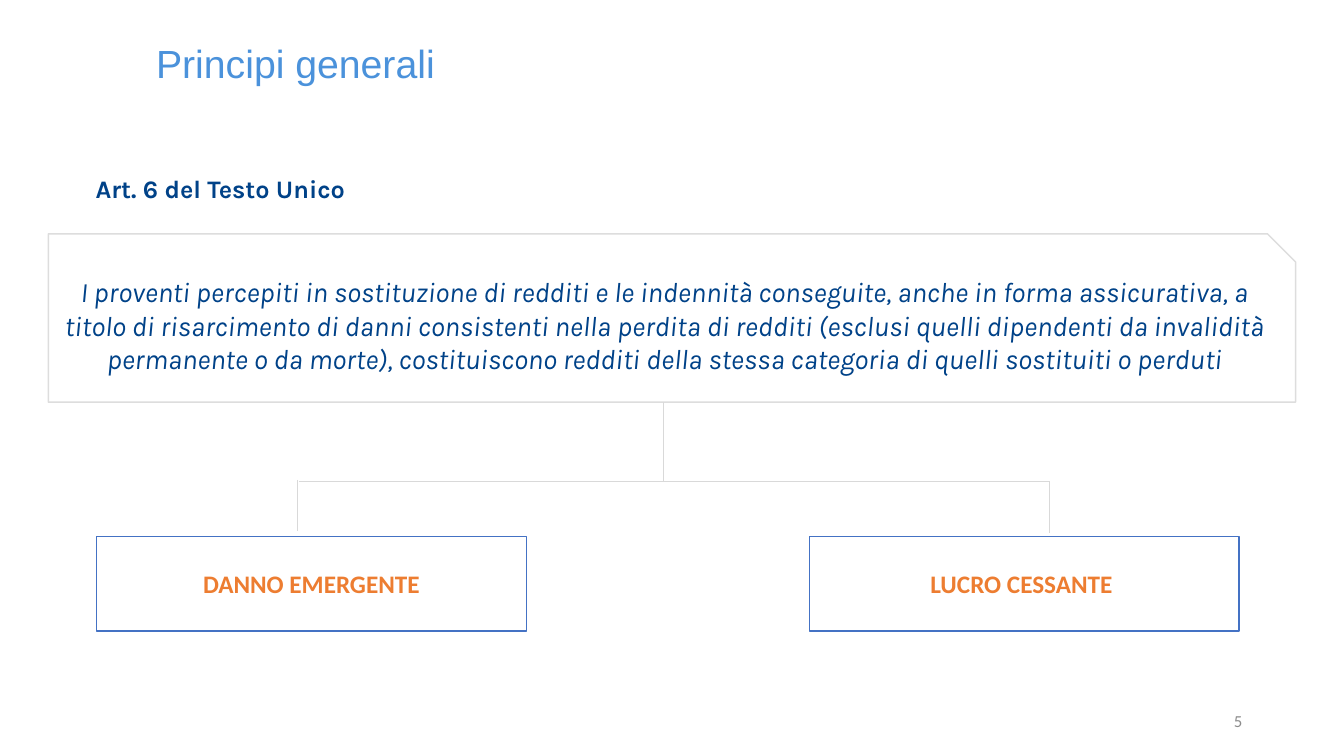
from dataclasses import dataclass

from lxml.etree import SubElement
from pptx import Presentation
from pptx.dml.color import RGBColor
from pptx.enum.shapes import MSO_CONNECTOR, MSO_SHAPE
from pptx.enum.text import MSO_ANCHOR, MSO_AUTO_SIZE, PP_ALIGN
from pptx.oxml.ns import qn
from pptx.slide import Slide
from pptx.text.text import TextFrame
from pptx.util import Inches, Pt


@dataclass(frozen=True)
class TextStyle:
    font: str
    size: float
    color: str
    bold: bool = False
    italic: bool = False


@dataclass(frozen=True)
class Theme:
    paper: str = "FFFFFF"
    article_line: str = "DDDDDD"
    damage_line: str = "4472C4"
    branch_line: str = "D9D9D9"
    border_width: float = 1
    branch_width: float = 0.5
    title: TextStyle = TextStyle("Arial", 28, "4B92DB")
    heading: TextStyle = TextStyle("Karla", 18, "004288", bold=True)
    article: TextStyle = TextStyle("Karla", 20, "004288", italic=True)
    damage: TextStyle = TextStyle("Calibri", 18, "ED7D31", bold=True)
    page_number: TextStyle = TextStyle("Calibri", 12, "8C8C8C")


@dataclass(frozen=True)
class Area:
    left: float
    top: float
    width: float
    height: float

    def lengths(self) -> tuple[Inches, Inches, Inches, Inches]:
        return Inches(self.left), Inches(self.top), Inches(self.width), Inches(self.height)


@dataclass(frozen=True)
class Panel:
    text: str
    area: Area
    outline: MSO_SHAPE
    line: str
    style: TextStyle


@dataclass(frozen=True)
class Label:
    text: str
    area: Area
    style: TextStyle
    align: PP_ALIGN = PP_ALIGN.LEFT
    anchor: MSO_ANCHOR = MSO_ANCHOR.TOP
    wrap: bool = True
    fit: MSO_AUTO_SIZE = MSO_AUTO_SIZE.SHAPE_TO_FIT_TEXT


@dataclass(frozen=True)
class Branch:
    x1: float
    y1: float
    x2: float
    y2: float


THEME = Theme()

PANELS = [
    Panel(
        "I proventi percepiti in sostituzione di redditi e le indennità conseguite, "
        "anche in forma assicurativa, a titolo di risarcimento di danni consistenti "
        "nella perdita di redditi (esclusi quelli dipendenti da invalidità permanente "
        "o da morte), costituiscono redditi della stessa categoria di quelli "
        "sostituiti o perduti",
        Area(0.48, 2.32, 12.37, 1.67),
        MSO_SHAPE.SNIP_1_RECTANGLE,
        THEME.article_line,
        THEME.article,
    ),
    *(
        Panel(text, Area(left, 5.32, 4.26, 0.94), MSO_SHAPE.RECTANGLE, THEME.damage_line, THEME.damage)
        for text, left in (("DANNO EMERGENTE", 0.96), ("LUCRO CESSANTE ", 8.03))
    ),
]

LABELS = [
    Label("Principi generali", Area(1.45, 0.34, 3, 0.57), THEME.title, wrap=False),
    Label("Art. 6 del Testo Unico", Area(0.85, 1.67, 6.67, 0.4), THEME.heading),
    Label("5", Area(9.42, 6.95, 3, 0.4), THEME.page_number,
          PP_ALIGN.RIGHT, MSO_ANCHOR.MIDDLE, fit=MSO_AUTO_SIZE.NONE),
]

BRANCHES = [
    Branch(6.58, 3.99, 6.58, 4.77),
    Branch(2.97, 4.78, 10.41, 4.78),
    Branch(2.95, 4.76, 2.95, 5.27),
    Branch(10.41, 4.78, 10.41, 5.29),
]


def write_text(frame: TextFrame, text: str, style: TextStyle, align: PP_ALIGN, anchor: MSO_ANCHOR) -> None:
    frame.vertical_anchor = anchor
    para = frame.paragraphs[0]
    para.alignment = align
    span = para.add_run()
    span.text = text
    span.font.name = style.font
    span.font.size = Pt(style.size)
    span.font.bold = style.bold
    span.font.italic = style.italic
    span.font.color.rgb = RGBColor.from_string(style.color)


def draw_panel(page: Slide, panel: Panel) -> None:
    box = page.shapes.add_shape(panel.outline, *panel.area.lengths())
    box.shadow.inherit = False
    box.fill.solid()
    box.fill.fore_color.rgb = RGBColor.from_string(THEME.paper)
    box.line.color.rgb = RGBColor.from_string(panel.line)
    box.line.width = Pt(THEME.border_width)
    box.text_frame.word_wrap = True
    write_text(box.text_frame, panel.text, panel.style, PP_ALIGN.CENTER, MSO_ANCHOR.MIDDLE)


def draw_label(page: Slide, label: Label) -> None:
    frame = page.shapes.add_textbox(*label.area.lengths()).text_frame
    frame.word_wrap = label.wrap
    frame.auto_size = label.fit
    write_text(frame, label.text, label.style, label.align, label.anchor)


def draw_branch(page: Slide, branch: Branch) -> None:
    connector = page.shapes.add_connector(
        MSO_CONNECTOR.STRAIGHT,
        Inches(branch.x1), Inches(branch.y1), Inches(branch.x2), Inches(branch.y2),
    )
    connector.line.color.rgb = RGBColor.from_string(THEME.branch_line)
    connector.line.width = Pt(THEME.branch_width)
    SubElement(connector._element.spPr, qn("a:effectLst"))


def main() -> None:
    deck = Presentation()
    deck.slide_width = Inches(13.33)
    deck.slide_height = Inches(7.5)
    page = deck.slides.add_slide(deck.slide_layouts[6])
    for panel in PANELS:
        draw_panel(page, panel)
    for label in LABELS:
        draw_label(page, label)
    for branch in BRANCHES:
        draw_branch(page, branch)
    deck.save("out.pptx")


if __name__ == "__main__":
    main()
